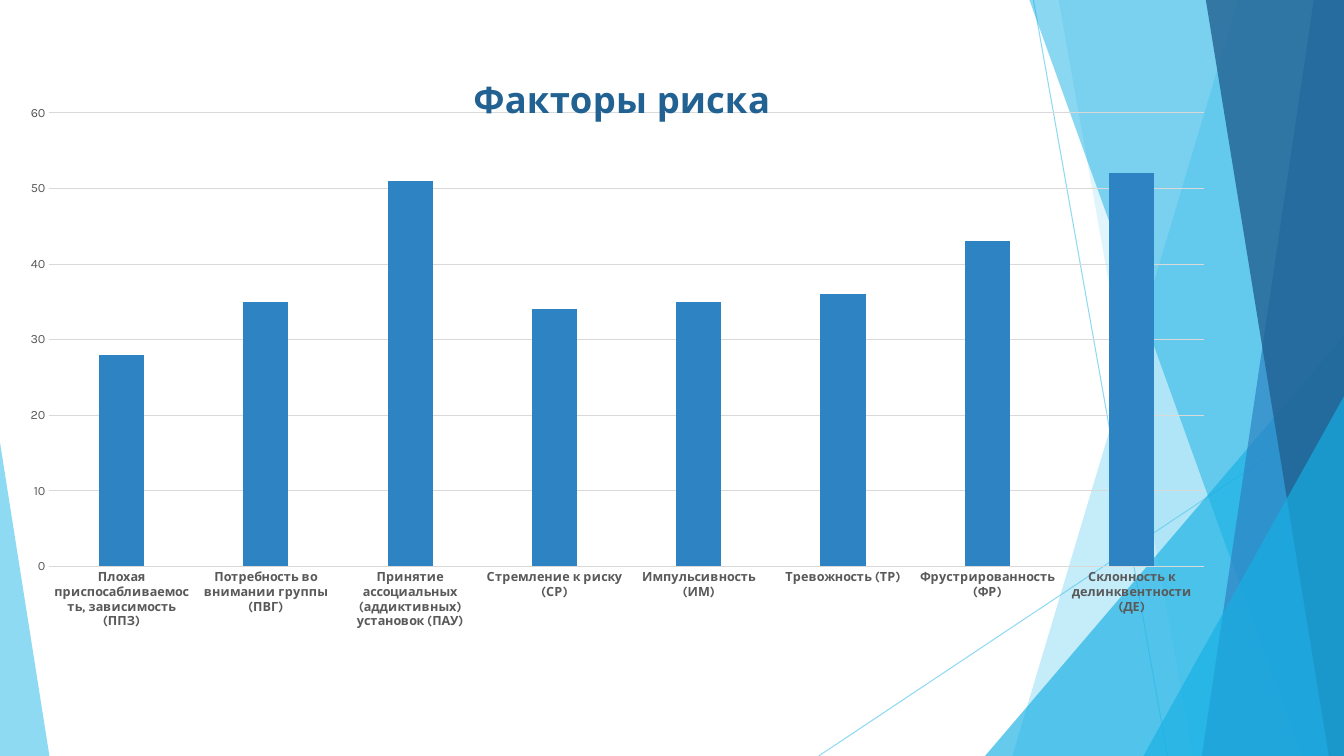
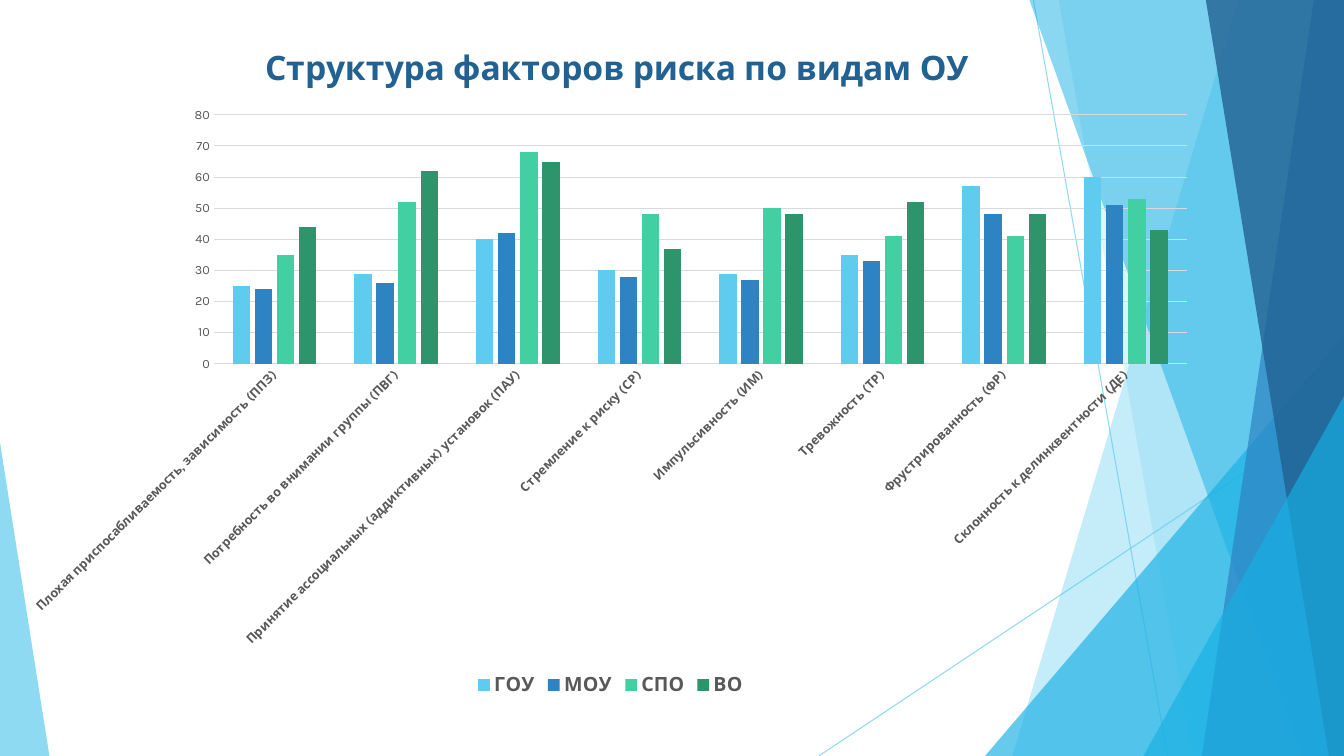
"""Build two slides of column charts on risk factors over a shared faceted backdrop."""
from dataclasses import dataclass

from lxml import etree
from pptx import Presentation
from pptx.chart.data import CategoryChartData
from pptx.dml.color import RGBColor
from pptx.enum.chart import XL_CHART_TYPE, XL_LEGEND_POSITION, XL_TICK_MARK
from pptx.enum.shapes import MSO_CONNECTOR, MSO_SHAPE
from pptx.oxml.ns import qn
from pptx.util import Emu, Pt

COLUMNS = XL_CHART_TYPE.COLUMN_CLUSTERED
LEGEND_BOTTOM = XL_LEGEND_POSITION.BOTTOM
NO_TICK = XL_TICK_MARK.NONE
STRAIGHT = MSO_CONNECTOR.STRAIGHT
TRIANGLE = MSO_SHAPE.ISOSCELES_TRIANGLE

PX = 9144
SLIDE_W, SLIDE_H = 1333, 750
BLANK_LAYOUT = 6


@dataclass(frozen=True)
class Theme:
    font: str = "Karla"
    sky: str = "5FCBEF"
    cyan: str = "17B0E4"
    blue: str = "2E83C3"
    navy: str = "226292"
    mint: str = "42D0A2"
    green: str = "2E946B"
    label: str = "595959"
    grid: str = "D9D9D9"
    chart_size: int = 10
    axis_size: int = 9
    legend_size: int = 14
    hairline: float = 0.75


THEME = Theme()

RAYS = [((1025, 0), (1158, 750)), ((1333, 403), (812, 750))]
RAY_OPACITY = 70

FACETS = [
    dict(color=THEME.sky, opacity=36, top=1228, bottom=1004),
    dict(color=THEME.sky, opacity=20, top=1050, bottom=1183),
    dict(color=THEME.cyan, opacity=66, box=(977, 333, 356, 417), apex=1),
    dict(color=THEME.cyan, opacity=50, top=1021, bottom=1291),
    dict(color=THEME.blue, opacity=70, top=1303, bottom=1192),
    dict(color=THEME.navy, opacity=80, top=1196, bottom=1318),
    dict(color=THEME.cyan, opacity=66, box=(1134, 393, 199, 357), apex=1),
    dict(color=THEME.sky, opacity=70, box=(0, 439, 49, 311), apex=0),
]

FACTORS = [
    "Плохая приспосабливаемость, зависимость (ППЗ)",
    "Потребность во внимании группы (ПВГ)",
    "Принятие ассоциальных (аддиктивных) установок (ПАУ)",
    "Стремление к риску (СР)",
    "Импульсивность (ИМ)",
    "Тревожность (ТР)",
    "Фрустрированность (ФР)",
    "Склонность к делинквентности (ДЕ)",
]

CHARTS = [
    dict(
        title="Факторы риска", title_size=26, title_at=(463, 68),
        frame=(7, 44, 1207, 638), plot=(49, 112, 1145, 450),
        top_value=60, label_angle=0, legend=False,
        series=[("Series 1", THEME.blue, (28, 35, 51, 34, 35, 36, 43, 52))],
    ),
    dict(
        title="Структура факторов риска по видам ОУ", title_size=24, title_at=(257, 40),
        frame=(10, 16, 1191, 679), plot=(212, 114, 965, 247),
        top_value=80, label_angle=-45, legend=True,
        series=[
            ("ГОУ", THEME.sky, (25, 29, 40, 30, 29, 35, 57, 60)),
            ("МОУ", THEME.blue, (24, 26, 42, 28, 27, 33, 48, 51)),
            ("СПО", THEME.mint, (35, 52, 68, 48, 50, 41, 41, 53)),
            ("ВО", THEME.green, (44, 62, 65, 37, 48, 52, 48, 43)),
        ],
    ),
]


def px(*lengths):
    return [Emu(length * PX) for length in lengths]


def rgb(color):
    return RGBColor.from_string(color)


def set_font(font, size, color=THEME.label, bold=False):
    font.name = THEME.font
    font.size = Pt(size)
    font.bold = bold
    font.color.rgb = rgb(color)


def write(frame, text, **style):
    run = frame.paragraphs[0].add_run()
    run.text = text
    set_font(run.font, **style)


def set_line(line, color):
    line.color.rgb = rgb(color)
    line.width = Pt(THEME.hairline)


def set_opacity(shape, percent):
    for color in shape.element.xpath(".//a:solidFill/a:srgbClr"):
        etree.SubElement(color, qn("a:alpha")).set("val", str(percent * 1000))


def add_ray(group, start, end):
    ray = group.shapes.add_connector(STRAIGHT, *px(*start, *end))
    set_line(ray.line, THEME.sky)
    set_opacity(ray, RAY_OPACITY)
    etree.SubElement(ray.element.spPr, qn("a:effectLst"))


def add_facet(group, color, opacity, box=None, apex=0, top=0, bottom=0):
    if box:
        facet = group.shapes.add_shape(TRIANGLE, *px(*box))
        facet.adjustments[0] = apex
    else:
        outline = group.shapes.build_freeform(top, 0, scale=PX)
        outline.add_line_segments([(SLIDE_W, 0), (SLIDE_W, SLIDE_H), (bottom, SLIDE_H)])
        facet = outline.convert_to_shape()
    facet.shadow.inherit = False
    facet.fill.solid()
    facet.fill.fore_color.rgb = rgb(color)
    facet.line.fill.background()
    set_opacity(facet, opacity)


def move_backdrop_to_layout(slide, layout):
    for placeholder in list(layout.placeholders):
        layout.shapes.element.remove(placeholder.element)
    backdrop = slide.shapes.add_group_shape()
    for start, end in RAYS:
        add_ray(backdrop, start, end)
    for facet in FACETS:
        add_facet(backdrop, **facet)
    layout.shapes.element.append(backdrop.element)


def place_in_chart(part, position, frame, box, target=None):
    for old_layout in part.findall(qn("c:layout")):
        part.remove(old_layout)
    left, top, width, height = frame
    x, y, *size = box
    settings = [("layoutTarget", target)] if target else []
    settings += [("xMode", "edge"), ("yMode", "edge")]
    settings += [("x", (x - left) / width), ("y", (y - top) / height)]
    settings += [(name, value / full) for name, value, full in zip("wh", size, (width, height))]
    layout = etree.Element(qn("c:layout"))
    manual = etree.SubElement(layout, qn("c:manualLayout"))
    for name, value in settings:
        etree.SubElement(manual, qn(f"c:{name}")).set("val", str(value))
    part.insert(position, layout)


def format_axes(chart, top_value, label_angle):
    factors, values = chart.category_axis, chart.value_axis
    for axis in (factors, values):
        axis.major_tick_mark = axis.minor_tick_mark = NO_TICK
        set_font(axis.tick_labels.font, THEME.axis_size, bold=axis is factors)
    set_line(factors.format.line, THEME.grid)
    values.format.line.fill.background()
    values.has_major_gridlines = True
    set_line(values.major_gridlines.format.line, THEME.grid)
    values.minimum_scale, values.maximum_scale, values.major_unit = 0, top_value, 10
    label_body = chart.element.xpath("c:chart/c:plotArea/c:catAx/c:txPr/a:bodyPr")[0]
    label_body.set("rot", str(label_angle * 60000))
    label_body.set("vert", "horz")


def add_factor_chart(slide, title, title_size, title_at, frame, plot,
                     top_value, label_angle, legend, series):
    data = CategoryChartData()
    data.categories = FACTORS
    for name, _, scores in series:
        data.add_series(name, scores)
    chart = slide.shapes.add_chart(COLUMNS, *px(*frame), data).chart
    set_font(chart.font, THEME.chart_size, color="000000")

    chart.has_title = True
    write(chart.chart_title.text_frame, title, size=title_size, color=THEME.navy, bold=True)
    place_in_chart(chart.element.xpath("c:chart/c:title")[0], 1, frame, title_at)
    place_in_chart(chart.element.xpath("c:chart/c:plotArea")[0], 0, frame, plot, "inner")

    columns = chart.plots[0]
    columns.gap_width, columns.overlap, columns.vary_by_categories = 219, -27, False
    for group, (_, color, _) in zip(columns.series, series):
        group.format.fill.solid()
        group.format.fill.fore_color.rgb = rgb(color)
    format_axes(chart, top_value, label_angle)

    chart.has_legend = legend
    if legend:
        chart.legend.position = LEGEND_BOTTOM
        chart.legend.include_in_layout = False
        set_font(chart.legend.font, THEME.legend_size, bold=True)


def main():
    deck = Presentation()
    deck.slide_width, deck.slide_height = px(SLIDE_W, SLIDE_H)
    layout = deck.slide_layouts[BLANK_LAYOUT]
    slides = [deck.slides.add_slide(layout) for _ in CHARTS]
    move_backdrop_to_layout(slides[0], layout)
    for slide, chart in zip(slides, CHARTS):
        add_factor_chart(slide, **chart)
    deck.save("out.pptx")


if __name__ == "__main__":
    main()
